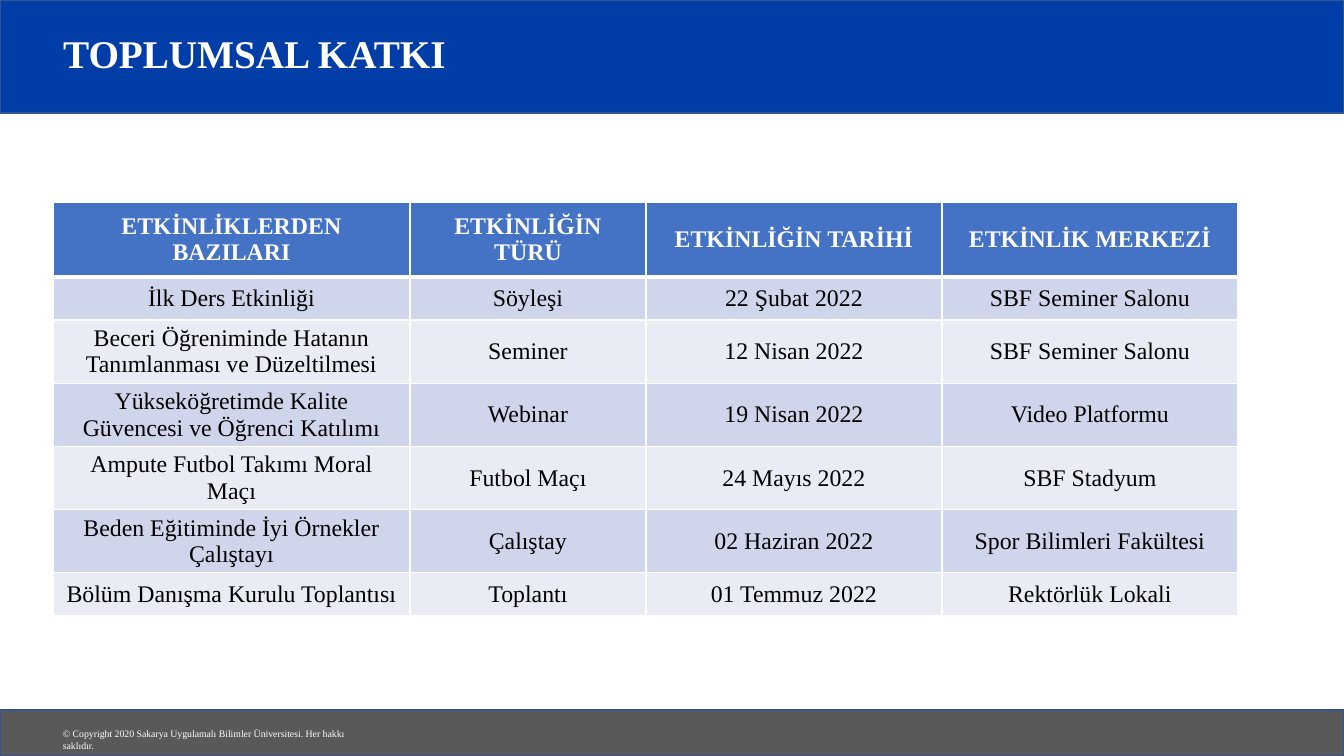
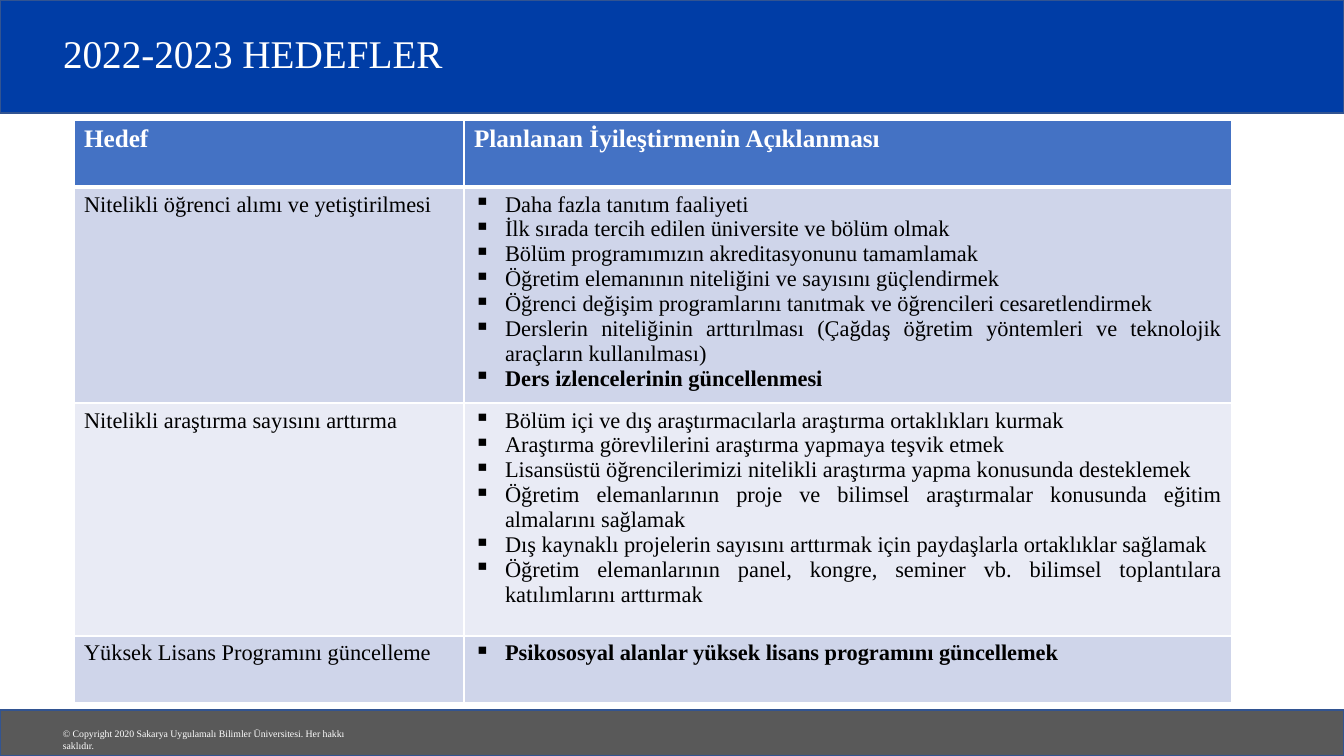
from collections import namedtuple

from lxml import etree
from pptx import Presentation
from pptx import util as u
from pptx.dml.color import RGBColor
from pptx.enum import shapes, text
from pptx.oxml.ns import qn

PX = u.Inches(1) / 100.8
FONT = "Times New Roman"
WHITE, BLACK = "FFFFFF", "000000"
BLUE, GREY, OUTLINE = "003DA6", "595959", "325491"
HEADER_FILL, ROW_FILLS = "4472C4", ("CFD5EA", "E9EBF5")
TITLE_ONLY = 5

Box = namedtuple("Box", "left top width height")
Bullet = namedtuple("Bullet", "text bold", defaults=(False,))
TableStyle = namedtuple("TableStyle", "header_size body_size align anchor")

SLIDE = Box(0, 0, 1344, 756)
BAND = Box(0, 0, 1344, 113)
FOOTER = Box(0, 710, 1344, 46)
COPYRIGHT = "© Copyright 2020 Sakarya Uygulamalı Bilimler Üniversitesi. Her hakkı saklıdır."

EVENTS = [
    ["ETKİNLİKLERDEN BAZILARI", "ETKİNLİĞİN TÜRÜ", "ETKİNLİĞİN TARİHİ", "ETKİNLİK MERKEZİ"],
    ["İlk Ders Etkinliği", "Söyleşi", "22 Şubat 2022", "SBF Seminer Salonu"],
    ["Beceri Öğreniminde Hatanın Tanımlanması ve Düzeltilmesi", "Seminer",
     "12 Nisan 2022", "SBF Seminer Salonu"],
    ["Yükseköğretimde Kalite Güvencesi ve Öğrenci Katılımı", "Webinar",
     "19 Nisan 2022", "Video Platformu"],
    ["Ampute Futbol Takımı Moral Maçı", "Futbol Maçı", "24 Mayıs 2022", "SBF Stadyum"],
    ["Beden Eğitiminde İyi Örnekler Çalıştayı", "Çalıştay",
     "02 Haziran 2022", "Spor Bilimleri Fakültesi"],
    ["Bölüm Danışma Kurulu Toplantısı", "Toplantı", "01 Temmuz 2022", "Rektörlük Lokali"],
]

GOALS = [
    ["Hedef", "Planlanan İyileştirmenin Açıklanması"],
    ["Nitelikli öğrenci alımı ve yetiştirilmesi", [
        Bullet("Daha fazla tanıtım faaliyeti"),
        Bullet("İlk sırada tercih edilen üniversite ve bölüm olmak"),
        Bullet("Bölüm programımızın akreditasyonunu tamamlamak"),
        Bullet("Öğretim elemanının niteliğini ve sayısını güçlendirmek"),
        Bullet("Öğrenci değişim programlarını tanıtmak ve öğrencileri cesaretlendirmek"),
        Bullet("Derslerin niteliğinin arttırılması (Çağdaş öğretim yöntemleri ve "
               "teknolojik araçların kullanılması)"),
        Bullet("Ders izlencelerinin güncellenmesi", bold=True),
    ]],
    ["Nitelikli araştırma sayısını arttırma", [
        Bullet("Bölüm içi ve dış araştırmacılarla araştırma ortaklıkları kurmak"),
        Bullet("Araştırma görevlilerini araştırma yapmaya teşvik etmek"),
        Bullet("Lisansüstü öğrencilerimizi nitelikli araştırma yapma konusunda desteklemek"),
        Bullet("Öğretim elemanlarının proje ve bilimsel araştırmalar konusunda eğitim "
               "almalarını sağlamak"),
        Bullet("Dış kaynaklı projelerin sayısını arttırmak için paydaşlarla ortaklıklar sağlamak"),
        Bullet("Öğretim elemanlarının panel, kongre, seminer vb. bilimsel toplantılara "
               "katılımlarını arttırmak"),
    ]],
    ["Yüksek Lisans Programını güncelleme", [
        Bullet("Psikososyal alanlar yüksek lisans programını güncellemek", bold=True),
    ]],
]


def px(length):
    return u.Emu(round(length * PX))


def emu_box(box):
    return [px(length) for length in box]


def color(hex_string):
    return RGBColor.from_string(hex_string)


def add_run(paragraph, words, size, hex_color, bold=False):
    run = paragraph.add_run()
    run.text = words
    font = run.font
    font.name, font.size, font.bold = FONT, u.Pt(size), bold
    font.color.rgb = color(hex_color)


def add_band(slide, box, fill):
    band = slide.shapes.add_shape(shapes.MSO_SHAPE.RECTANGLE, *emu_box(box))
    band.shadow.inherit = False
    band.fill.solid()
    band.fill.fore_color.rgb = color(fill)
    band.line.color.rgb = color(OUTLINE)
    band.line.width = u.Pt(1)
    return band


def add_copyright(slide, footer):
    box = Box(footer.left + 53, footer.top + 13, 332, 22)
    label = slide.shapes.add_textbox(*emu_box(box))
    label.text_frame.word_wrap = True
    add_run(label.text_frame.paragraphs[0], COPYRIGHT, 7, WHITE)
    return label


def dress_layout(layout, slide):
    """Draw the shared parts on the slide, then move them behind the layout's title."""
    for placeholder in list(layout.placeholders):
        if placeholder.placeholder_format.idx:
            layout.shapes.element.remove(placeholder.element)
    title = layout.placeholders[0]
    title.left, title.top, title.width, title.height = emu_box(
        Box(BAND.left + 53, BAND.top + 19, 1112, 74))
    shared = [add_band(slide, BAND, BLUE), add_band(slide, FOOTER, GREY),
              add_copyright(slide, FOOTER)]
    for index, shape in enumerate(shared, start=2):
        layout.shapes.element.insert(index, shape.element)


def set_title(slide, words, bold):
    frame = slide.shapes.title.text_frame
    frame.auto_size = text.MSO_AUTO_SIZE.NONE
    frame.vertical_anchor = text.MSO_ANCHOR.MIDDLE
    paragraph = frame.paragraphs[0]
    paragraph.alignment = text.PP_ALIGN.LEFT
    paragraph.line_spacing = 0.9
    add_run(paragraph, words, 28, WHITE, bold)


def set_borders(cell, top, bottom):
    """Give the cell white borders; top and bottom are widths in points."""
    properties = cell._tc.get_or_add_tcPr()
    for side, width in (("L", 1), ("R", 1), ("T", top), ("B", bottom)):
        line = etree.SubElement(properties, qn(f"a:ln{side}"), w=str(u.Pt(width)))
        fill = etree.SubElement(line, qn("a:solidFill"))
        etree.SubElement(fill, qn("a:srgbClr"), val=WHITE)


def add_bullet(paragraph):
    indent = px(31)
    properties = paragraph._p.get_or_add_pPr()
    properties.set("marL", str(indent))
    properties.set("indent", str(-indent))
    etree.SubElement(properties, qn("a:buChar"), char="▪")


def fill_cell(cell, content, row, style):
    is_header = row == 0
    set_borders(cell, top=3 if row == 1 else 1, bottom=3 if is_header else 1)
    cell.fill.solid()
    cell.fill.fore_color.rgb = color(HEADER_FILL if is_header else ROW_FILLS[(row - 1) % 2])
    cell.vertical_anchor = style.anchor
    size = style.header_size if is_header else style.body_size
    frame = cell.text_frame
    paragraph = frame.paragraphs[0]
    if isinstance(content, str):
        paragraph.alignment = style.align
        add_run(paragraph, content, size, WHITE if is_header else BLACK, is_header)
        return
    for index, item in enumerate(content):
        if index:
            paragraph = frame.add_paragraph()
        paragraph.alignment = text.PP_ALIGN.JUSTIFY
        add_bullet(paragraph)
        add_run(paragraph, item.text, size, BLACK, item.bold)


def add_styled_table(slide, left, top, widths, heights, rows, style):
    box = Box(left, top, sum(widths), sum(heights))
    table = slide.shapes.add_table(len(rows), len(widths), *emu_box(box)).table
    for column, width in zip(table.columns, widths):
        column.width = px(width)
    for row, (height, contents) in enumerate(zip(heights, rows)):
        table.rows[row].height = px(height)
        for column, content in enumerate(contents):
            fill_cell(table.cell(row, column), content, row, style)


def build_events(slide):
    set_title(slide, "TOPLUMSAL KATKI", bold=True)
    style = TableStyle(17, 17, text.PP_ALIGN.CENTER, text.MSO_ANCHOR.MIDDLE)
    add_styled_table(slide, 53, 202, [357, 236, 296, 296],
                     [75, 43, 63, 63, 63, 63, 43], EVENTS, style)


def build_goals(slide):
    set_title(slide, "2022-2023 HEDEFLER", bold=False)
    style = TableStyle(18, 16, text.PP_ALIGN.LEFT, text.MSO_ANCHOR.TOP)
    add_styled_table(slide, 74, 120, [390, 768], [67, 216, 233, 67], GOALS, style)


def main():
    presentation = Presentation()
    presentation.slide_width, presentation.slide_height = px(SLIDE.width), px(SLIDE.height)
    layout = presentation.slide_layouts[TITLE_ONLY]
    events, goals = [presentation.slides.add_slide(layout) for _ in range(2)]
    dress_layout(layout, events)
    build_events(events)
    build_goals(goals)
    presentation.save("out.pptx")


if __name__ == "__main__":
    main()
